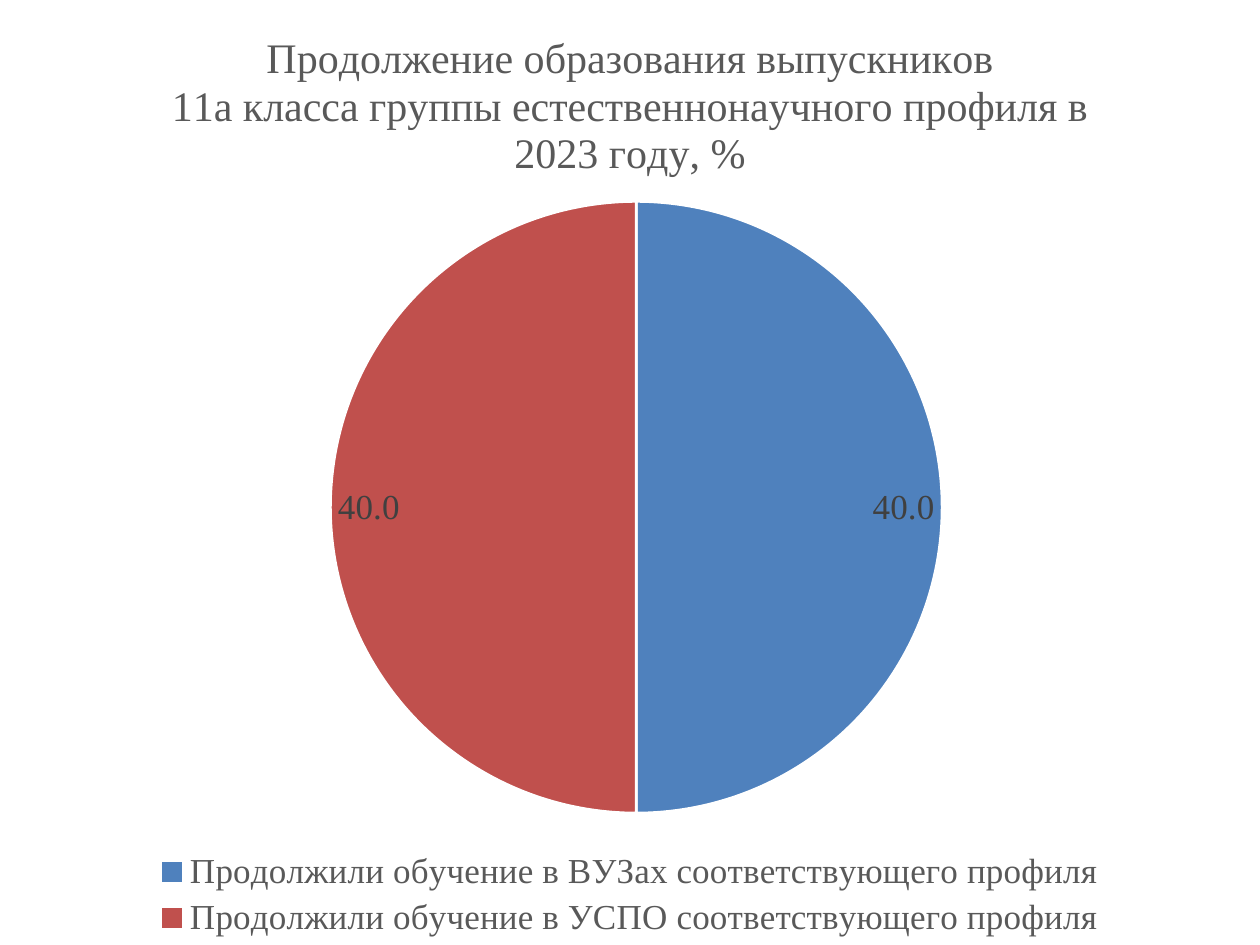
from lxml import etree
from pptx import Presentation
from pptx.chart.data import CategoryChartData
from pptx.dml.color import RGBColor
from pptx.enum.chart import XL_CHART_TYPE, XL_LABEL_POSITION, XL_LEGEND_POSITION
from pptx.oxml.ns import qn
from pptx.util import Cm, Pt

PIE = XL_CHART_TYPE.PIE
INSIDE_END = XL_LABEL_POSITION.INSIDE_END
BOTTOM = XL_LEGEND_POSITION.BOTTOM

TITLE = [
    "Продолжение образования выпускников",
    "11а класса группы естественнонаучного профиля в 2023 году, %",
]
# category, value, colour
SECTORS = [
    ("Продолжили обучение в ВУЗах соответствующего профиля", 40, "4F81BD"),
    ("Продолжили обучение в УСПО соответствующего профиля", 40, "C0504D"),
]
FONT_NAME = "Times New Roman"
TITLE_FONT = {"name": FONT_NAME, "size": Pt(24), "bold": False}
TEXT_FONT = {"name": FONT_NAME, "size": Pt(20), "bold": False}
GREY, DARK_GREY, WHITE = "595959", "404040", "FFFFFF"
SLIDE_WIDTH, SLIDE_HEIGHT = Cm(25.4), Cm(19.05)
CHART_TOP = Cm(0.08)
# Shares of the chart area
PIE_AREA = {"x": 0.26, "y": 0.21, "w": 0.49, "h": 0.65}


def colour(hex_value):
    return RGBColor.from_string(hex_value)


def style_font(font, values, hex_value):
    for name, value in values.items():
        setattr(font, name, value)
    font.color.rgb = colour(hex_value)


def place_plot(chart, area):
    """Fix the inner plot area at the given shares of the chart."""
    plot_area = chart.plots[0]._element.getparent()
    for old_layout in plot_area.findall(qn("c:layout")):
        plot_area.remove(old_layout)
    layout = etree.Element(qn("c:layout"))
    plot_area.insert(0, layout)
    manual = etree.SubElement(layout, qn("c:manualLayout"))
    settings = {"layoutTarget": "inner", "xMode": "edge", "yMode": "edge", **area}
    for tag, value in settings.items():
        etree.SubElement(manual, qn(f"c:{tag}")).set("val", str(value))


def add_title(chart):
    text_frame = chart.chart_title.text_frame
    for index, line in enumerate(TITLE):
        paragraph = text_frame.add_paragraph() if index else text_frame.paragraphs[0]
        run = paragraph.add_run()
        run.text = line
        style_font(run.font, TITLE_FONT, GREY)
    chart.chart_title.include_in_layout = False


def add_pie(slide):
    data = CategoryChartData(number_format="0.0")
    data.categories = [category for category, _, _ in SECTORS]
    data.add_series("Series 1", [value for _, value, _ in SECTORS])
    chart = slide.shapes.add_chart(
        PIE, 0, CHART_TOP, SLIDE_WIDTH, SLIDE_HEIGHT - CHART_TOP, data
    ).chart
    style_font(chart.font, TEXT_FONT, "000000")
    add_title(chart)

    chart.has_legend = True
    chart.legend.position = BOTTOM
    chart.legend.include_in_layout = False
    style_font(chart.legend.font, TEXT_FONT, GREY)

    plot = chart.plots[0]
    plot.vary_by_categories = True
    for index, (_, _, sector_colour) in enumerate(SECTORS):
        sector = plot.series[0].points[index].format
        sector.fill.solid()
        sector.fill.fore_color.rgb = colour(sector_colour)
        sector.line.color.rgb = colour(WHITE)
        sector.line.width = Pt(1.5)

    labels = plot.series[0].data_labels
    label_format = {
        "show_value": True,
        "number_format": "0.0",
        "number_format_is_linked": False,
        "position": INSIDE_END,
    }
    for name, value in label_format.items():
        setattr(labels, name, value)
    style_font(labels.font, TEXT_FONT, DARK_GREY)
    place_plot(chart, PIE_AREA)


def main():
    presentation = Presentation()
    presentation.slide_width = SLIDE_WIDTH
    presentation.slide_height = SLIDE_HEIGHT
    slide = presentation.slides.add_slide(presentation.slide_layouts[6])
    add_pie(slide)
    presentation.save("out.pptx")


if __name__ == "__main__":
    main()
